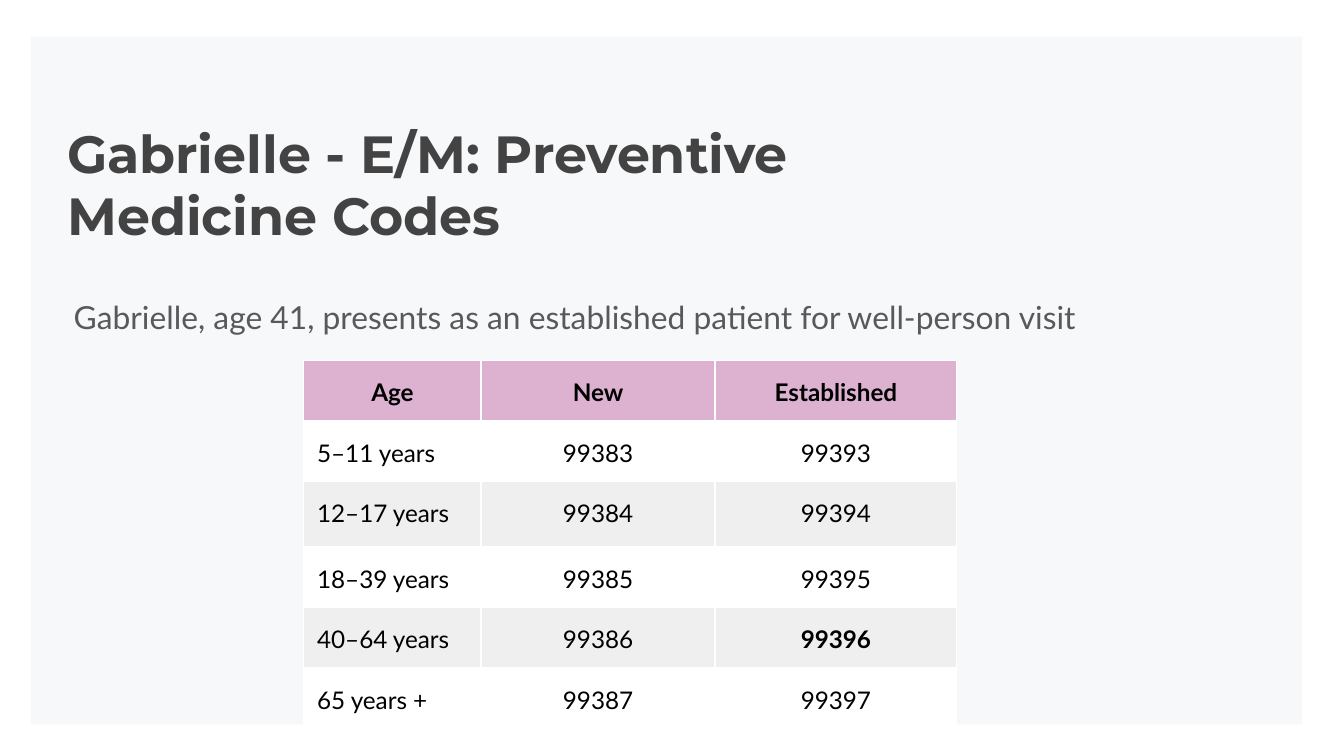
from typing import NamedTuple

from pptx import Presentation
from pptx.dml.color import RGBColor
from pptx.enum.shapes import MSO_SHAPE
from pptx.enum.text import MSO_ANCHOR, MSO_AUTO_SIZE, PP_ALIGN
from pptx.oxml import parse_xml
from pptx.oxml.ns import nsdecls, qn
from pptx.util import Inches, Pt

COLORS = {
    "panel": "073763",
    "title": "434343",
    "body": "595959",
    "cell_text": "000000",
    "header": "C87DB1",
    "white": "FFFFFF",
    "band": "EFEFEF",
}
MARGIN = Inches(0.1)
COLUMN_WIDTHS = [1.32, 1.74, 1.8]
ROW_HEIGHTS = [0.42, 0.42, 0.49, 0.34, 0.42, 0.42]


class CodeRow(NamedTuple):
    age: str
    new: str
    established: str


HEADER = CodeRow("Age", "New", "Established")
CODE_ROWS = [
    CodeRow("5–11 years", "99383", "99393"),
    CodeRow("12–17 years", "99384", "99394"),
    CodeRow("18–39 years", "99385", "99395"),
    CodeRow("40–64 years", "99386", "99396"),
    CodeRow("65 years +", "99387", "99397"),
]
PATIENT_CODE = "99396"


def set_fill(fill, color: str, opacity: int = 100) -> None:
    fill.solid()
    fill.fore_color.rgb = RGBColor.from_string(COLORS[color])
    if opacity < 100:
        color_element = fill._xPr.find(qn("a:solidFill"))[0]
        color_element.append(
            parse_xml(f'<a:alpha {nsdecls("a")} val="{opacity * 1000}"/>'))


def format_runs(paragraph, font_name: str, size: float, color: str,
                bold: bool = False) -> None:
    for run in paragraph.runs:
        run.font.name = font_name
        run.font.size = Pt(size)
        run.font.bold = bold
        run.font.color.rgb = RGBColor.from_string(COLORS[color])


def set_frame(text_frame) -> None:
    text_frame.word_wrap = True
    text_frame.auto_size = MSO_AUTO_SIZE.NONE
    text_frame.vertical_anchor = MSO_ANCHOR.TOP
    text_frame.margin_left = text_frame.margin_right = MARGIN
    text_frame.margin_top = text_frame.margin_bottom = MARGIN


def add_borders(cell) -> None:
    properties = cell._tc.get_or_add_tcPr()
    for index, side in enumerate(("lnL", "lnR", "lnT", "lnB")):
        properties.insert(index, parse_xml(
            f'<a:{side} {nsdecls("a")} w="{Pt(0.75)}"><a:solidFill>'
            f'<a:srgbClr val="{COLORS["white"]}"/></a:solidFill></a:{side}>'))


def fill_cell(cell, text: str, row: int, column: int) -> None:
    is_header = row == 0
    cell.margin_left = cell.margin_right = MARGIN
    cell.margin_top = cell.margin_bottom = MARGIN
    if is_header:
        set_fill(cell.fill, "header", 57)
    else:
        set_fill(cell.fill, "white" if row % 2 else "band")
    add_borders(cell)
    cell.text_frame.text = text
    paragraph = cell.text_frame.paragraphs[0]
    paragraph.line_spacing = 1.15
    centered = is_header or column > 0
    paragraph.alignment = PP_ALIGN.CENTER if centered else PP_ALIGN.LEFT
    format_runs(paragraph, "Lato", 13, "cell_text",
                bold=is_header or text == PATIENT_CODE)


def add_panel(slide) -> None:
    panel = slide.shapes.add_shape(
        MSO_SHAPE.RECTANGLE, Inches(0.23), Inches(0.27), Inches(9.46), Inches(5.12))
    panel.shadow.inherit = False
    set_fill(panel.fill, "panel", 3)
    panel.line.fill.background()
    # Keep the panel behind the title
    slide.shapes._spTree.insert(2, panel._element)


def set_title(slide) -> None:
    title = slide.shapes.title
    title.left, title.top = Inches(0.4), Inches(0.8)
    title.width, title.height = Inches(9.32), Inches(0.63)
    set_frame(title.text_frame)
    title.text_frame.text = "Gabrielle - E/M: Preventive"
    paragraph = title.text_frame.paragraphs[0]
    paragraph.add_line_break()
    paragraph.add_run().text = "Medicine Codes"
    paragraph.alignment = PP_ALIGN.LEFT
    format_runs(paragraph, "Montserrat", 28, "title", bold=True)


def add_case(slide) -> None:
    box = slide.shapes.add_textbox(
        Inches(0.45), Inches(2.07), Inches(8.13), Inches(0.52))
    set_frame(box.text_frame)
    box.text_frame.text = (
        "Gabrielle, age 41, presents as an established patient for well-person visit")
    paragraph = box.text_frame.paragraphs[0]
    paragraph.line_spacing = 1.15
    paragraph.space_after = Pt(16)
    format_runs(paragraph, "Lato", 17, "body")


def add_code_table(slide) -> None:
    rows = [HEADER, *CODE_ROWS]
    height = Inches(2.73)
    frame = slide.shapes.add_table(
        len(rows), len(COLUMN_WIDTHS), Inches(2.26), Inches(2.68),
        Inches(sum(COLUMN_WIDTHS)), height)
    table = frame.table
    for column, width in zip(table.columns, COLUMN_WIDTHS):
        column.width = Inches(width)
    for row, row_height in zip(table.rows, ROW_HEIGHTS):
        row.height = Inches(row_height)
    frame.height = height
    for row_index, code_row in enumerate(rows):
        for column_index, text in enumerate(code_row):
            fill_cell(table.cell(row_index, column_index), text,
                      row_index, column_index)


def main() -> None:
    presentation = Presentation()
    # Widescreen, 16:9
    presentation.slide_width = Inches(10)
    presentation.slide_height = presentation.slide_width * 9 // 16
    title_only = presentation.slide_layouts[5]
    slide = presentation.slides.add_slide(title_only)
    add_panel(slide)
    set_title(slide)
    add_case(slide)
    add_code_table(slide)
    presentation.save("out.pptx")


if __name__ == "__main__":
    main()
